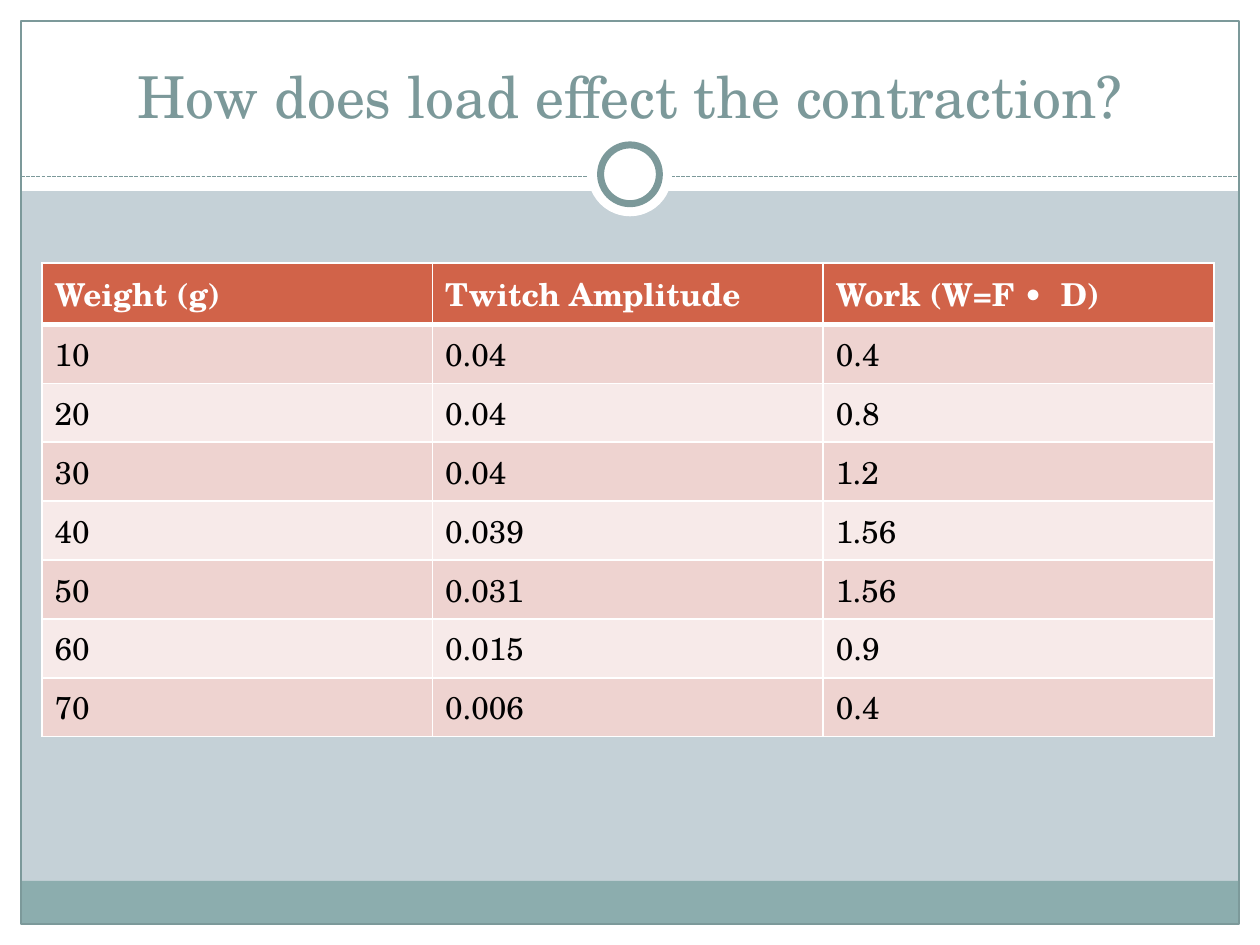
"""Build a slide that tabulates twitch amplitude and work against load."""
import dataclasses
import typing

import lxml.etree
import pptx
import pptx.dml.color
import pptx.enum.dml
import pptx.enum.shapes
import pptx.enum.text
import pptx.oxml.ns
import pptx.util

RGBColor = pptx.dml.color.RGBColor
WHITE = RGBColor(0xFF, 0xFF, 0xFF)
BLACK = RGBColor(0x00, 0x00, 0x00)
MIST = RGBColor(0xC5, 0xD1, 0xD7)
TEAL = RGBColor(0x8C, 0xAD, 0xAE)
SAGE = RGBColor(0x7C, 0x99, 0x9A)
RUST = RGBColor(0xD1, 0x63, 0x49)
ROSE = RGBColor(0xEE, 0xD3, 0xD0)
BLUSH = RGBColor(0xF7, 0xEA, 0xE9)

FONT = "TeX Gyre Schola"
COLS, ROWS = 60, 45
UNIT = pptx.util.Inches(10) // COLS
RECT = pptx.enum.shapes.MSO_SHAPE.RECTANGLE
OVAL = pptx.enum.shapes.MSO_SHAPE.OVAL


@dataclasses.dataclass(frozen=True)
class Box:
    left: float
    top: float
    width: float
    height: float

    def place(self) -> list[int]:
        return [grid(size) for size in dataclasses.astuple(self)]


@dataclasses.dataclass(frozen=True)
class Panel:
    box: Box
    fill: typing.Optional[RGBColor] = WHITE
    kind: typing.Any = RECT
    line: float = 0


PANELS = [
    Panel(Box(0, 44, COLS, 1)),
    Panel(Box(0, 0, COLS, 9.1)),
    Panel(Box(0, 0, 1, ROWS)),
    Panel(Box(59, 0, 1, ROWS)),
    Panel(Box(1, 41.95, 58, 2.05), TEAL),
    Panel(Box(1, 1, 58, 43), None, line=0.75),
]
RINGS = [
    Panel(Box(28, 6.3, 4, 4), kind=OVAL),
    Panel(Box(28.6, 6.9, 2.8, 2.8), kind=OVAL, line=4),
]
DATA = [
    ("Weight (g)", "Twitch Amplitude", "Work (W=F •  D)"),
    ("10", "0.04", "0.4"),
    ("20", "0.04", "0.8"),
    ("30", "0.04", "1.2"),
    ("40", "0.039", "1.56"),
    ("50", "0.031", "1.56"),
    ("60", "0.015", "0.9"),
    ("70", "0.006", "0.4"),
]


def grid(count: float) -> int:
    return round(count * UNIT)


def style(frame, size: float, color: RGBColor, bold: bool = False) -> None:
    for run in frame.paragraphs[0].runs:
        run.font.name = FONT
        run.font.size = pptx.util.Pt(size)
        run.font.bold = bold
        run.font.color.rgb = color


def draw_panel(slide, panel: Panel) -> None:
    shape = slide.shapes.add_shape(panel.kind, *panel.box.place())
    shape.shadow.inherit = False
    if panel.fill is None:
        shape.fill.background()
    else:
        shape.fill.solid()
        shape.fill.fore_color.rgb = panel.fill
    if panel.line:
        shape.line.color.rgb = SAGE
        shape.line.width = pptx.util.Pt(panel.line)
    else:
        shape.line.fill.background()


def draw_rule(slide, row: float) -> None:
    rule = slide.shapes.add_connector(
        pptx.enum.shapes.MSO_CONNECTOR.STRAIGHT,
        grid(1), grid(row), grid(COLS - 1), grid(row))
    rule.line.color.rgb = SAGE
    rule.line.width = pptx.util.Pt(0.75)
    rule.line.dash_style = pptx.enum.dml.MSO_LINE.SQUARE_DOT
    lxml.etree.SubElement(
        rule._element.spPr, pptx.oxml.ns.qn("a:effectLst"))


def draw_title(slide, text: str) -> None:
    title = slide.shapes.title
    title.left, title.top, title.width, title.height = Box(2, 1.5, 56, 5).place()
    frame = title.text_frame
    frame.text = text
    frame.word_wrap = True
    frame.auto_size = pptx.enum.text.MSO_AUTO_SIZE.NONE
    frame.vertical_anchor = pptx.enum.text.MSO_ANCHOR.BOTTOM
    frame.paragraphs[0].alignment = pptx.enum.text.PP_ALIGN.CENTER
    style(frame, 33, SAGE)
    slide.shapes._spTree.append(title._element)


def edge(cell, side: str, width: float) -> None:
    qn = pptx.oxml.ns.qn
    props = cell._tc.get_or_add_tcPr()
    line = lxml.etree.SubElement(
        props, qn(f"a:ln{side}"), w=str(pptx.util.Pt(width)))
    fill = lxml.etree.SubElement(line, qn("a:solidFill"))
    lxml.etree.SubElement(fill, qn("a:srgbClr"), val=str(WHITE))


def draw_table(slide, data: list[tuple[str, ...]], box: Box) -> None:
    table = slide.shapes.add_table(
        len(data), len(data[0]), *box.place()).table
    for y, row in enumerate(data):
        head = y == 0
        shade = RUST if head else ROSE if y % 2 else BLUSH
        for x, text in enumerate(row):
            cell = table.cell(y, x)
            cell.text_frame.text = text
            style(cell.text_frame, 18, WHITE if head else BLACK, head)
            for side in "LRTB":
                thick = side == "B" and head or side == "T" and y == 1
                edge(cell, side, 3 if thick else 1)
            cell.fill.solid()
            cell.fill.fore_color.rgb = shade


def main() -> None:
    deck = pptx.Presentation()
    deck.slide_width = grid(COLS)
    deck.slide_height = grid(ROWS)
    slide = deck.slides.add_slide(deck.slide_layouts[5])
    slide.background.fill.solid()
    slide.background.fill.fore_color.rgb = MIST
    for panel in PANELS:
        draw_panel(slide, panel)
    draw_rule(slide, 8.4)
    for ring in RINGS:
        draw_panel(slide, ring)
    draw_title(slide, "How does load effect the contraction?")
    draw_table(slide, data=DATA, box=Box(2, 12.53, 55.8, 19.44))
    deck.save("out.pptx")


if __name__ == "__main__":
    main()
